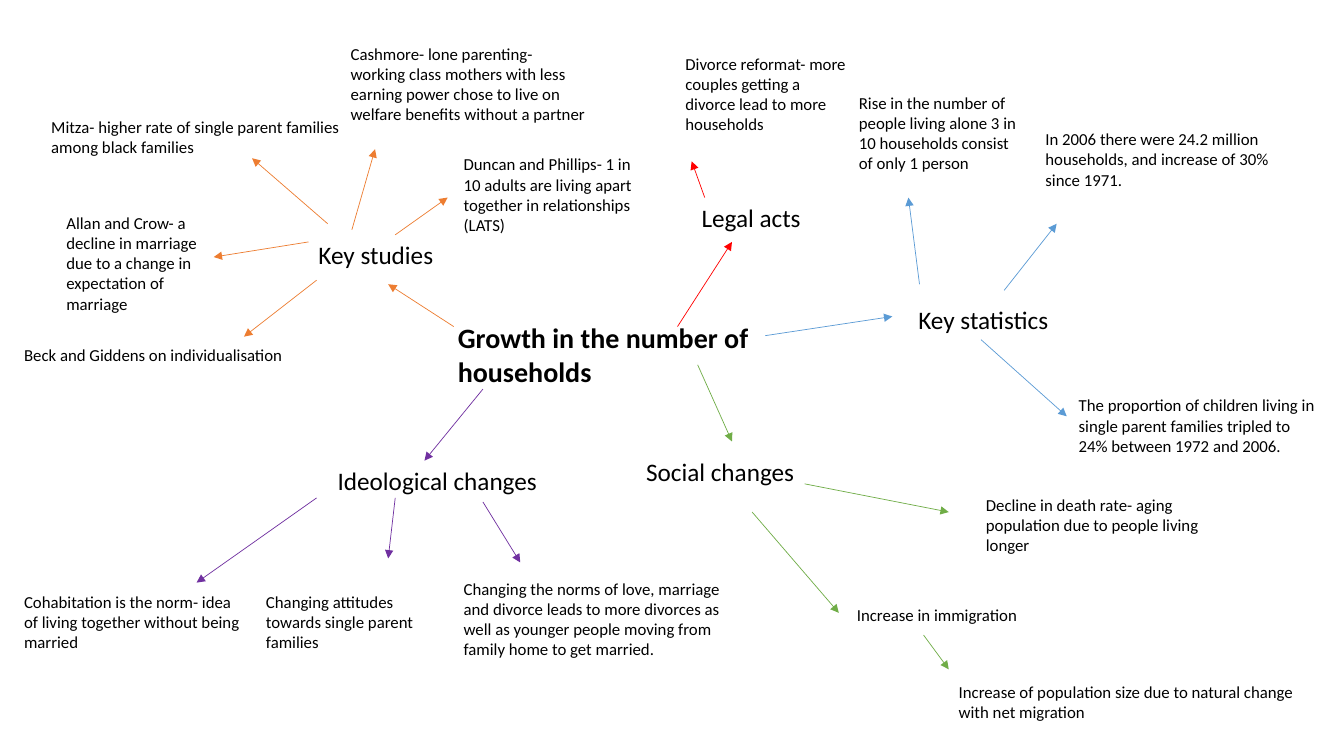
from lxml import etree
from pptx import Presentation
from pptx.dml.color import RGBColor
from pptx.enum.shapes import MSO_CONNECTOR
from pptx.enum.text import MSO_ANCHOR, MSO_AUTO_SIZE, PP_ALIGN
from pptx.oxml.ns import qn
from pptx.util import Emu, Pt

STRAIGHT = MSO_CONNECTOR.STRAIGHT
TOP = MSO_ANCHOR.TOP
FIT_SHAPE = MSO_AUTO_SIZE.SHAPE_TO_FIT_TEXT
LEFT = PP_ALIGN.LEFT

EMU_PER_PX = 9144  # 100 px to the inch
SLIDE_SIZE = (1333, 750)
TITLE = ("Growth in the number of households", (444, 313, 388, 77))

# Heading, colour, heading box, arrow from the title, notes as (text, box, arrow).
# Arrows (from x, y, to x, y) and note boxes are measured from the heading's corner.
BRANCHES = [
    ("Legal acts", "FF0000", (686, 196, 154, 40), (-14, 128, 40, 44), [
        ("Divorce reformat- more couples getting a divorce lead to more households",
         (-16, -148, 186, 91), (13, 0, 0, -36)),
    ]),
    ("Key statistics", "5B9BD5", (901, 297, 279, 40), (-142, 36, -16, 17), [
        ("Rise in the number of people living alone 3 in 10 households consist "
         "of only 1 person",
         (-59, -210, 185, 91), (11, -15, 0, -101)),
        ("In 2006 there were 24.2 million households, and increase of 30% since 1971.",
         (126, -174, 259, 71), (95, -9, 147, -75)),
        ("The proportion of children living in single parent families tripled to "
         "24% between 1972 and 2006.",
         (159, 90, 256, 71), (72, 40, 157, 116)),
    ]),
    ("Social changes", "70AD47", (631, 448, 230, 40), (61, -86, 95, -10), [
        ("Decline in death rate- aging population due to people living longer",
         (337, 38, 246, 71), (167, 32, 310, 60)),
        ("Increase in immigration",
         (209, 147, 307, 30), (115, 60, 201, 160)),
        ("Increase of population size due to natural change with net migration",
         (310, 223, 362, 50), (285, 182, 310, 216)),
    ]),
    ("Ideological changes", "7030A0", (325, 457, 249, 40), (154, -71, 96, 0), [
        ("Changing the norms of love, marriage and divorce leads to more divorces "
         "as well as younger people moving from family home to get married.",
         (125, 112, 291, 91), (154, 41, 191, 101)),
        ("Changing attitudes towards single parent families",
         (-71, 125, 190, 71), (67, 37, 60, 97)),
        ("Cohabitation is the norm- idea of living together without being married",
         (-311, 125, 236, 71), (-11, 37, -130, 121)),
    ]),
    ("Key studies", "ED7D31", (306, 233, 255, 40), (144, 91, 79, 49), [
        ("Beck and Giddens on individualisation",
         (-292, 104, 359, 30), (8, 45, -64, 101)),
        ("Allan and Crow- a decline in marriage due to a change in expectation "
         "of marriage",
         (-250, -27, 160, 111), (0, 7, -94, 22)),
        ("Mitza- higher rate of single parent families among black families",
         (-265, -122, 323, 50), (19, -11, -56, -76)),
        ("Cashmore- lone parenting- working class mothers with less earning power "
         "chose to live on welfare benefits without a partner",
         (32, -195, 257, 91), (43, -5, 66, -85)),
        ("Duncan and Phillips- 1 in 10 adults are living apart together in "
         "relationships (LATS)",
         (144, -85, 192, 91), (86, 0, 138, -37)),
    ]),
]


def px(length):
    return Emu(length * EMU_PER_PX)


def color(hex_string):
    return RGBColor.from_string(hex_string)


def write_text(shape, text, size, bold=False):
    frame = shape.text_frame
    frame.text = text
    frame.word_wrap = True
    frame.auto_size = FIT_SHAPE
    frame.vertical_anchor = TOP
    paragraph = frame.paragraphs[0]
    paragraph.alignment = LEFT
    paragraph.line_spacing = 1.0
    font = paragraph.font
    font.name = "Calibri"
    font.size = Pt(size)
    font.bold = bold
    font.color.rgb = color("000000")


def add_label(slide, text, box, size):
    shape = slide.shapes.add_textbox(*map(px, box))
    write_text(shape, text, size)


def add_arrow(slide, points, line_color):
    arrow = slide.shapes.add_connector(STRAIGHT, *map(px, points))
    arrow.line.color.rgb = color(line_color)
    arrow.line.width = Pt(0.5)
    etree.SubElement(arrow.line._get_or_add_ln(), qn("a:tailEnd"), type="triangle")
    etree.SubElement(arrow._element.spPr, qn("a:effectLst"))


def add_title(slide, text, box):
    title = slide.shapes.title
    title.left, title.top, title.width, title.height = map(px, box)
    write_text(title, text, 20, bold=True)


def add_branch(slide, heading, line_color, box, title_arrow, notes):
    """Place a heading with its notes and arrows around the heading's box."""
    left, top = box[:2]

    def shift(points):
        return left + points[0], top + points[1], left + points[2], top + points[3]

    add_arrow(slide, shift(title_arrow), line_color)
    add_label(slide, heading, box, 18)
    for text, (x, y, width, height), arrow in notes:
        add_arrow(slide, shift(arrow), line_color)
        add_label(slide, text, (left + x, top + y, width, height), 12)


def main():
    presentation = Presentation()
    presentation.slide_width, presentation.slide_height = map(px, SLIDE_SIZE)
    slide = presentation.slides.add_slide(presentation.slide_layouts[5])
    add_title(slide, *TITLE)
    for branch in BRANCHES:
        add_branch(slide, *branch)
    presentation.save("out.pptx")


if __name__ == "__main__":
    main()
